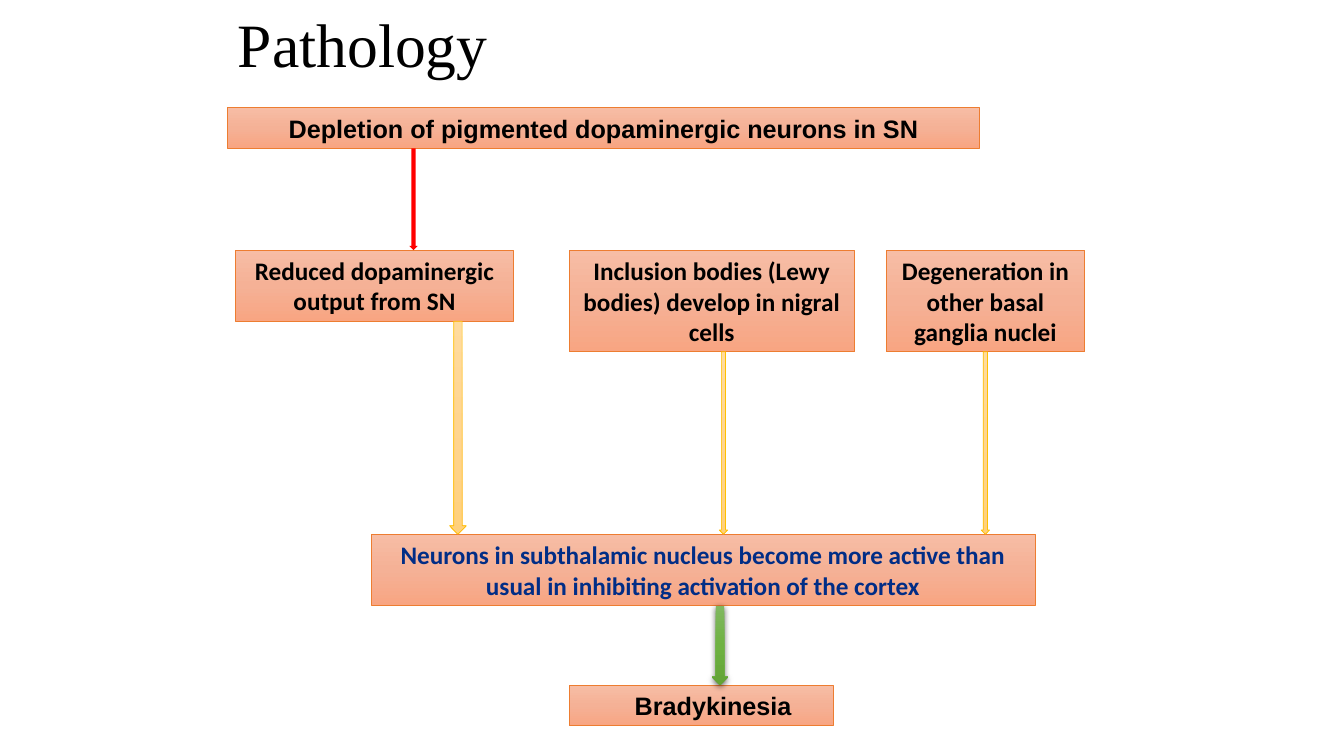
from copy import deepcopy
from dataclasses import dataclass

from lxml import etree
from pptx import Presentation
from pptx.dml.color import RGBColor
from pptx.enum.shapes import MSO_SHAPE
from pptx.enum.text import MSO_ANCHOR, MSO_AUTO_SIZE, PP_ALIGN
from pptx.oxml.ns import qn
from pptx.util import Pt

RECT, ARROW = MSO_SHAPE.RECTANGLE, MSO_SHAPE.DOWN_ARROW
LEFT, CENTER = PP_ALIGN.LEFT, PP_ALIGN.CENTER
MIDDLE = MSO_ANCHOR.MIDDLE
FIXED = MSO_AUTO_SIZE.NONE


@dataclass(frozen=True)
class Theme:
    ink: str = "000000"
    navy: str = "012D86"
    peach: tuple = ("F7BDA5", "F5B196", "F8A582")
    orange: str = "ED7D31"
    sand: tuple = ("FFDB9E", "FFD590", "FFD07C")
    gold: str = "FFC000"
    green: tuple = ("81B861", "6FB242", "62A336")
    red: tuple = ("FF0000",)
    serif: str = "Times New Roman"
    sans: str = "Arial"
    body: str = "Calibri"
    head: float = 44
    text: float = 18
    thin: float = 0.5


THEME = Theme()


@dataclass(frozen=True)
class Box:
    text: str
    left: float
    top: float
    width: float
    height: float
    font: str = THEME.body
    color: str = THEME.ink
    align: PP_ALIGN = CENTER
    inset: float = 7.2


@dataclass(frozen=True)
class Arrow:
    start: Box
    end: Box
    left: float
    width: float
    fill: tuple = THEME.sand
    line: str = THEME.gold
    glow: bool = False

    @property
    def top(self) -> float:
        return self.start.top + self.start.height

    @property
    def height(self) -> float:
        return self.end.top - self.top


ROW = 178.6
LOSS = Box("Depletion of pigmented dopaminergic neurons in SN",
           162.7, 77, 537, 29, THEME.sans)
OUTPUT = Box("Reduced dopaminergic output from SN", 168.2, ROW, 198.7, 50.9)
LEWY = Box("Inclusion bodies (Lewy bodies) develop in nigral cells",
           406.4, ROW, 204, 72.7)
DECAY = Box("Degeneration in other basal ganglia nuclei",
            632.9, ROW, 142, 72.7)
ACTIVE = Box("Neurons in subthalamic nucleus become more active than "
             "usual in inhibiting activation of the cortex",
             265, 381.6, 474.3, 50.9, color=THEME.navy)
SLOW = Box("Bradykinesia", 406.6, 489.4, 188.8, 29, THEME.sans,
           align=LEFT, inset=46.8)
BOXES = [LOSS, OUTPUT, LEWY, DECAY, ACTIVE, SLOW]
ARROWS = [
    Arrow(LOSS, OUTPUT, 292.4, 6, THEME.red, ""),
    Arrow(LEWY, ACTIVE, 513.8, 6),
    Arrow(DECAY, ACTIVE, 700.8, 6),
    Arrow(OUTPUT, ACTIVE, 321.1, 12),
    Arrow(ACTIVE, SLOW, 508.3, 12, THEME.green, "", glow=True),
]


def paint(shape, tones: tuple, line: str) -> None:
    shape.shadow.inherit = False
    fill = shape.fill
    if len(tones) == 1:
        fill.solid()
        fill.fore_color.rgb = RGBColor.from_string(tones[0])
    else:
        fill.gradient()
        fill.gradient_angle = 270
        stops = shape._element.spPr.find(".//" + qn("a:gsLst"))
        stops.insert(1, deepcopy(stops[0]))
        for i, (stop, tone) in enumerate(zip(fill.gradient_stops, tones)):
            stop.position = i / 2
            stop.color.rgb = RGBColor.from_string(tone)
    if line:
        shape.line.color.rgb = RGBColor.from_string(line)
        shape.line.width = Pt(THEME.thin)
    else:
        shape.line.fill.background()


def style(para, name: str, size: float, color: str, bold: bool) -> None:
    font = para.font
    font.name, font.size, font.bold = name, Pt(size), bold
    font.color.rgb = RGBColor.from_string(color)


def place(slide, kind: MSO_SHAPE, item: Box | Arrow):
    return slide.shapes.add_shape(
        kind, Pt(item.left), Pt(item.top), Pt(item.width), Pt(item.height))


def draw_box(slide, box: Box) -> None:
    shape = place(slide, RECT, box)
    paint(shape, THEME.peach, THEME.orange)
    frame = shape.text_frame
    frame.word_wrap = True
    frame.vertical_anchor = MIDDLE
    frame.margin_left = Pt(box.inset)
    para = frame.paragraphs[0]
    para.text, para.alignment = box.text, box.align
    style(para, box.font, THEME.text, box.color, True)


def draw_arrow(slide, arrow: Arrow) -> None:
    shape = place(slide, ARROW, arrow)
    paint(shape, arrow.fill, arrow.line)
    if arrow.glow:
        cast(shape)


def cast(shape) -> None:
    effect = shape._element.spPr.find(qn("a:effectLst"))
    shade = etree.SubElement(
        effect, qn("a:outerShdw"), blurRad=str(Pt(4.5)), dist=str(Pt(1.5)),
        dir="5400000", algn="ctr", rotWithShape="0")
    tone = etree.SubElement(shade, qn("a:srgbClr"), val=THEME.ink)
    etree.SubElement(tone, qn("a:alpha"), val="63000")


def draw_title(slide, text: str) -> None:
    title = slide.shapes.title
    title.left, title.top = Pt(162.7), Pt(0)
    title.width, title.height = Pt(648), Pt(68.4)
    frame = title.text_frame
    frame.auto_size, frame.vertical_anchor = FIXED, MIDDLE
    para = frame.paragraphs[0]
    para.text, para.alignment, para.line_spacing = text, LEFT, 0.9
    style(para, THEME.serif, THEME.head, THEME.ink, False)


def main() -> None:
    deck = Presentation()
    deck.slide_width, deck.slide_height = Pt(960), Pt(540)
    slide = deck.slides.add_slide(deck.slide_layouts[5])
    draw_title(slide, "Pathology")
    for box in BOXES:
        draw_box(slide, box)
    for arrow in ARROWS:
        draw_arrow(slide, arrow)
    deck.save("out.pptx")


if __name__ == "__main__":
    main()
